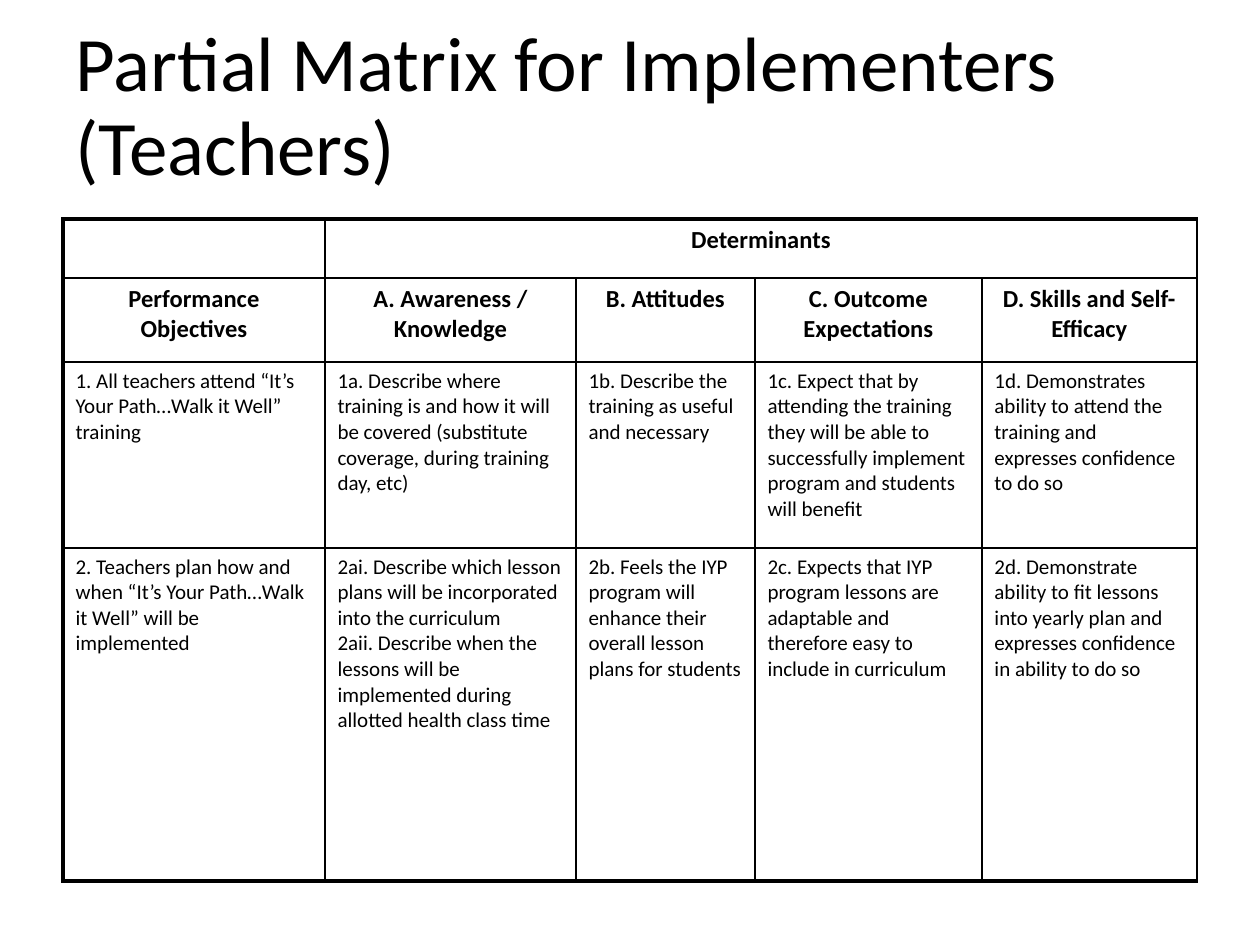
from lxml import etree
from pptx import Presentation
from pptx import util as u
from pptx.dml import color
from pptx.enum import text
from pptx.oxml import ns

SCALE = 914400 // 126


def style(paragraph, size, bold=False, hex_color="000000"):
    for run in paragraph.runs:
        run.font.name = "Calibri"
        run.font.size = u.Pt(size)
        run.font.bold = bold
        run.font.color.rgb = color.RGBColor.from_string(hex_color)


def add_border(cell, side, points, hex_color="000000"):
    properties = cell._tc.get_or_add_tcPr()
    line = etree.SubElement(properties, ns.qn(f"a:ln{side}"), w=str(u.Pt(points)))
    fill = etree.SubElement(line, ns.qn("a:solidFill"))
    etree.SubElement(fill, ns.qn("a:srgbClr"), val=hex_color)


presentation = Presentation()
presentation.slide_width = 1260 * SCALE
presentation.slide_height = 945 * SCALE
slide = presentation.slides.add_slide(presentation.slide_layouts[6])

title = slide.shapes.add_textbox(63 * SCALE, 63 * SCALE, 1155 * SCALE, 176 * SCALE)
title_frame = title.text_frame
title_frame.word_wrap = True
title_frame.vertical_anchor = text.MSO_ANCHOR.MIDDLE
title_frame.margin_bottom = 91 * SCALE
title_frame.text = "Partial Matrix for Implementers (Teachers)"
title_frame.paragraphs[0].line_spacing = 0.9
style(title_frame.paragraphs[0], 44)

column_widths = [262, 251, 179, 227, 215]
row_heights = [59, 84, 186, 333]
matrix = [
    ["", "Determinants", "", "", ""],
    [
        "Performance Objectives",
        "A. Awareness / Knowledge",
        "B. Attitudes",
        "C. Outcome Expectations",
        "D. Skills and Self-Efficacy",
    ],
    [
        "1. All teachers attend “It’s Your Path…Walk it Well” training",
        "1a. Describe where training is and how it will be covered "
        "(substitute coverage, during training day, etc)",
        "1b. Describe the training as useful and necessary",
        "1c. Expect that by attending the training they will be able to "
        "successfully implement program and students will benefit",
        "1d. Demonstrates ability to attend the training and expresses confidence to do so",
    ],
    [
        "2. Teachers plan how and when “It’s Your Path…Walk it Well” will be implemented",
        "2ai. Describe which lesson plans will be incorporated into the curriculum\n"
        "2aii. Describe when the lessons will be implemented during allotted health class time",
        "2b. Feels the IYP program will enhance their overall lesson plans for students",
        "2c. Expects that IYP program lessons are adaptable and therefore easy to include in curriculum",
        "2d. Demonstrate ability to fit lessons into yearly plan and expresses confidence in ability to do so",
    ],
]

table = slide.shapes.add_table(
    len(row_heights), len(column_widths), 63 * SCALE, 219 * SCALE,
    sum(column_widths) * SCALE, sum(row_heights) * SCALE,
).table
for column, width in zip(table.columns, column_widths):
    column.width = width * SCALE
for row, height in zip(table.rows, row_heights):
    row.height = height * SCALE
table.cell(0, 1).merge(table.cell(0, 4))

last_row = len(row_heights) - 1
for row_index, row_texts in enumerate(matrix):
    is_header = row_index < 2
    for column_index, cell_text in enumerate(row_texts):
        cell = table.cell(row_index, column_index)
        add_border(cell, "L", 2.25 if column_index == 0 else 1)
        add_border(cell, "R", 1)
        add_border(cell, "T", 2.25 if row_index == 0 else 1)
        add_border(cell, "B", 2.25 if row_index == last_row else 1)
        cell.fill.background()
        if not cell_text:
            continue
        cell.text_frame.text = cell_text
        for paragraph in cell.text_frame.paragraphs:
            paragraph.alignment = text.PP_ALIGN.CENTER if is_header else text.PP_ALIGN.LEFT
            style(paragraph, 14 if is_header else 12, is_header)

presentation.save("out.pptx")
